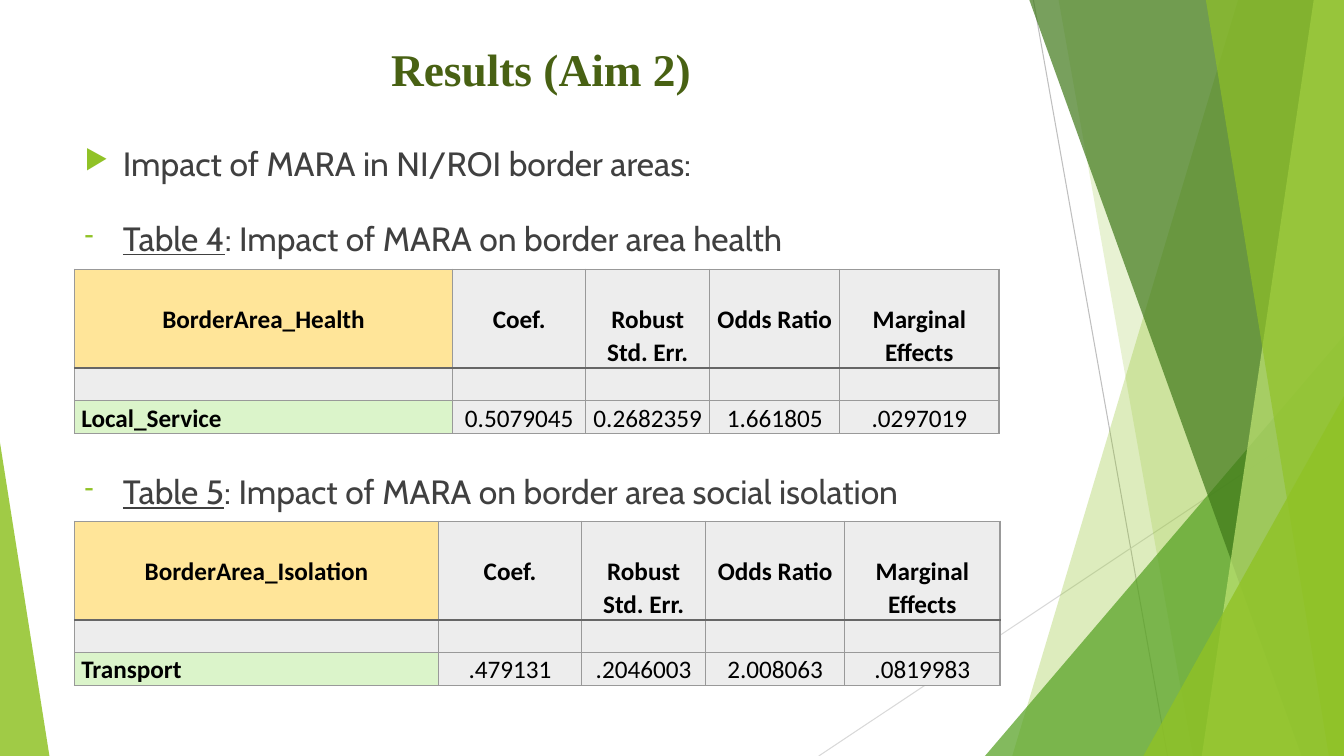
import pptx
import pptx.dml.color
import pptx.enum.shapes
import pptx.enum.text
import pptx.oxml
import pptx.oxml.ns
import pptx.util
import lxml.etree

COLORS = {
    "lime": "90C226", "green": "54A021", "forest": "3F7819", "pale": "C0E474",
    "title": "486113", "body": "404040", "black": "000000",
    "steep line": "BFBFBF", "shallow line": "D9D9D9",
    "yellow": "FFE599", "gray": "EDEDED", "mint": "DBF4CA",
    "border": "999999", "header border": "666666",
}
ALIGN = pptx.enum.text.PP_ALIGN

presentation = pptx.Presentation()
presentation.slide_width = pptx.util.Inches(13.33)
presentation.slide_height = pptx.util.Inches(7.5)
slide = presentation.slides.add_slide(presentation.slide_layouts[6])
across = presentation.slide_width / 100
down = presentation.slide_height / 100


def box(left, top, width, height):
    """Turn percentages of the slide into lengths."""
    return [round(left * across), round(top * down), round(width * across), round(height * down)]


def add_run(paragraph, text, color, **format_values):
    run = paragraph.add_run()
    run.text = text
    run.font.color.rgb = pptx.dml.color.RGBColor.from_string(COLORS[color])
    for name, value in format_values.items():
        setattr(run.font, name, value)


# Thin lines behind the facets
for color, start_x, start_y, end_x, end_y in [
    ("steep line", 76.89, 0, 86.87, 100),
    ("shallow line", 100, 53.73, 60.92, 100),
]:
    connector = slide.shapes.add_connector(
        pptx.enum.shapes.MSO_CONNECTOR.STRAIGHT, *box(start_x, start_y, end_x, end_y))
    connector.line.color.rgb = pptx.dml.color.RGBColor.from_string(COLORS[color])
    connector.line.width = pptx.util.Pt(0.75)
    properties = connector._element.spPr
    lxml.etree.SubElement(properties, pptx.oxml.ns.qn("a:effectLst"))

# Bands: left edge at the top and at the bottom, reaching the right edge of the slide.
# Triangles: left, top, width and peak position, standing on the bottom edge.
facets = [
    ("band", (92.12, 75.32), "lime", 30),
    ("band", (78.77, 88.75), "lime", 20),
    ("triangle", (73.29, 44.4, 26.71, 1), "green", 72),
    ("band", (76.59, 96.85), "forest", 70),
    ("band", (97.75, 89.42), "pale", 70),
    ("band", (89.72, 98.87), "lime", 65),
    ("triangle", (85.07, 52.4, 14.93, 1), "lime", 80),
    ("triangle", (0, 58.53, 3.68, 0), "lime", 85),
]
for kind, measures, color, opacity in facets:
    if kind == "band":
        top_x, bottom_x = [round(x * across) for x in measures]
        right, bottom = presentation.slide_width, presentation.slide_height
        builder = slide.shapes.build_freeform(top_x, 0)
        builder.add_line_segments([(right, 0), (right, bottom), (bottom_x, bottom)], close=True)
        shape = builder.convert_to_shape()
    else:
        left, top, width, peak = measures
        shape = slide.shapes.add_shape(
            pptx.enum.shapes.MSO_SHAPE.ISOSCELES_TRIANGLE, *box(left, top, width, 100 - top))
        shape.adjustments[0] = peak
    shape.shadow.inherit = False
    shape.line.fill.background()
    shape.fill.solid()
    shape.fill.fore_color.rgb = pptx.dml.color.RGBColor.from_string(COLORS[color])
    color_element = shape._element.spPr.find(".//" + pptx.oxml.ns.qn("a:srgbClr"))
    lxml.etree.SubElement(color_element, pptx.oxml.ns.qn("a:alpha"), val=str(opacity * 1000))

# Title
title = slide.shapes.add_textbox(*box(28.36, 4.8, 24.91, 11.33))
title.text_frame.word_wrap = True
add_run(title.text_frame.paragraphs[0], "Results (Aim 2)", "title",
        name="Times New Roman", size=pptx.util.Pt(32.4), bold=True)

# Bulleted text; the space before the last item leaves room for the first table
body = slide.shapes.add_textbox(*box(5.55, 18.27, 70.52, 69.73))
body.text_frame.word_wrap = True
items = [
    ("▶", "", "Impact of MARA in NI/ROI border areas:", 1.0, 0),
    ("-", "Table 4", ": Impact of MARA on border area health", 1.5, 10),
    ("-", "Table 5", ": Impact of MARA on border area social isolation", 1.5, 138),
]
for index, (bullet, label, text, line_spacing, space_before) in enumerate(items):
    paragraph = body.text_frame.add_paragraph() if index else body.text_frame.paragraphs[0]
    paragraph.line_spacing = line_spacing
    paragraph.space_before = pptx.util.Pt(space_before)
    properties = paragraph._p.get_or_add_pPr()
    indent = pptx.util.Inches(0.38)
    properties.set("marL", str(indent))
    properties.set("indent", str(-indent))
    bullet_color = lxml.etree.SubElement(properties, pptx.oxml.ns.qn("a:buClr"))
    lxml.etree.SubElement(bullet_color, pptx.oxml.ns.qn("a:srgbClr"), val=COLORS["lime"])
    lxml.etree.SubElement(properties, pptx.oxml.ns.qn("a:buSzPct"), val="80000")
    lxml.etree.SubElement(properties, pptx.oxml.ns.qn("a:buChar"), char=bullet)
    for words, underline in [(label, True), (text, False)]:
        if words:
            add_run(paragraph, words, "body", name="Cabin",
                    size=pptx.util.Pt(24), underline=underline)

# Result tables
headings = ["Coef.", "Robust Std. Err.", "Odds Ratio", "Marginal Effects"]
row_heights = [13.07, 4.36, 4.36]
tables = [
    (35.6, [28.13, 9.9, 9.23, 9.68, 11.85], "BorderArea_Health",
     ["Local_Service", "0.5079045", "0.2682359", "1.661805", ".0297019"]),
    (68.93, [27.08, 10.65, 9.23, 10.35, 11.55], "BorderArea_Isolation",
     ["Transport", ".479131", ".2046003", "2.008063", ".0819983"]),
]
for top, column_widths, outcome, values in tables:
    rows = [[outcome] + headings, [""] * len(values), values]
    table = slide.shapes.add_table(
        len(rows), len(values), *box(5.55, top, sum(column_widths), sum(row_heights))).table
    table.first_row = table.horz_banding = False
    for column, width in zip(table.columns, column_widths):
        column.width = round(width * across)
    for row, height in zip(table.rows, row_heights):
        row.height = round(height * down)
    for row_index, texts in enumerate(rows):
        for column_index, text in enumerate(texts):
            cell = table.cell(row_index, column_index)
            cell.margin_left = cell.margin_right = round(0.5 * across)
            cell.margin_top = round(row_heights[1] * down) if row_index == 0 else 0
            cell.margin_bottom = 0
            first = column_index == 0
            fill = ["yellow", "gray", "mint"][row_index] if first else "gray"
            paragraph = cell.text_frame.paragraphs[0]
            paragraph.line_spacing = 1.07
            paragraph.alignment = ALIGN.LEFT if first and row_index == 2 else ALIGN.CENTER
            if text:
                add_run(paragraph, text, "black", name="Calibri",
                        size=pptx.util.Pt(18), bold=first or row_index == 0)
            properties = cell._tc.get_or_add_tcPr()
            for side in ["L", "R", "T", "B"]:
                heavy = (row_index, side) in [(0, "B"), (1, "T")]
                border = lxml.etree.SubElement(
                    properties, pptx.oxml.ns.qn("a:ln" + side),
                    w=str(pptx.util.Pt(1.5 if heavy else 1)))
                border_fill = lxml.etree.SubElement(border, pptx.oxml.ns.qn("a:solidFill"))
                lxml.etree.SubElement(border_fill, pptx.oxml.ns.qn("a:srgbClr"),
                                      val=COLORS["header border" if heavy else "border"])
            cell.fill.solid()
            cell.fill.fore_color.rgb = pptx.dml.color.RGBColor.from_string(COLORS[fill])

presentation.save("out.pptx")
